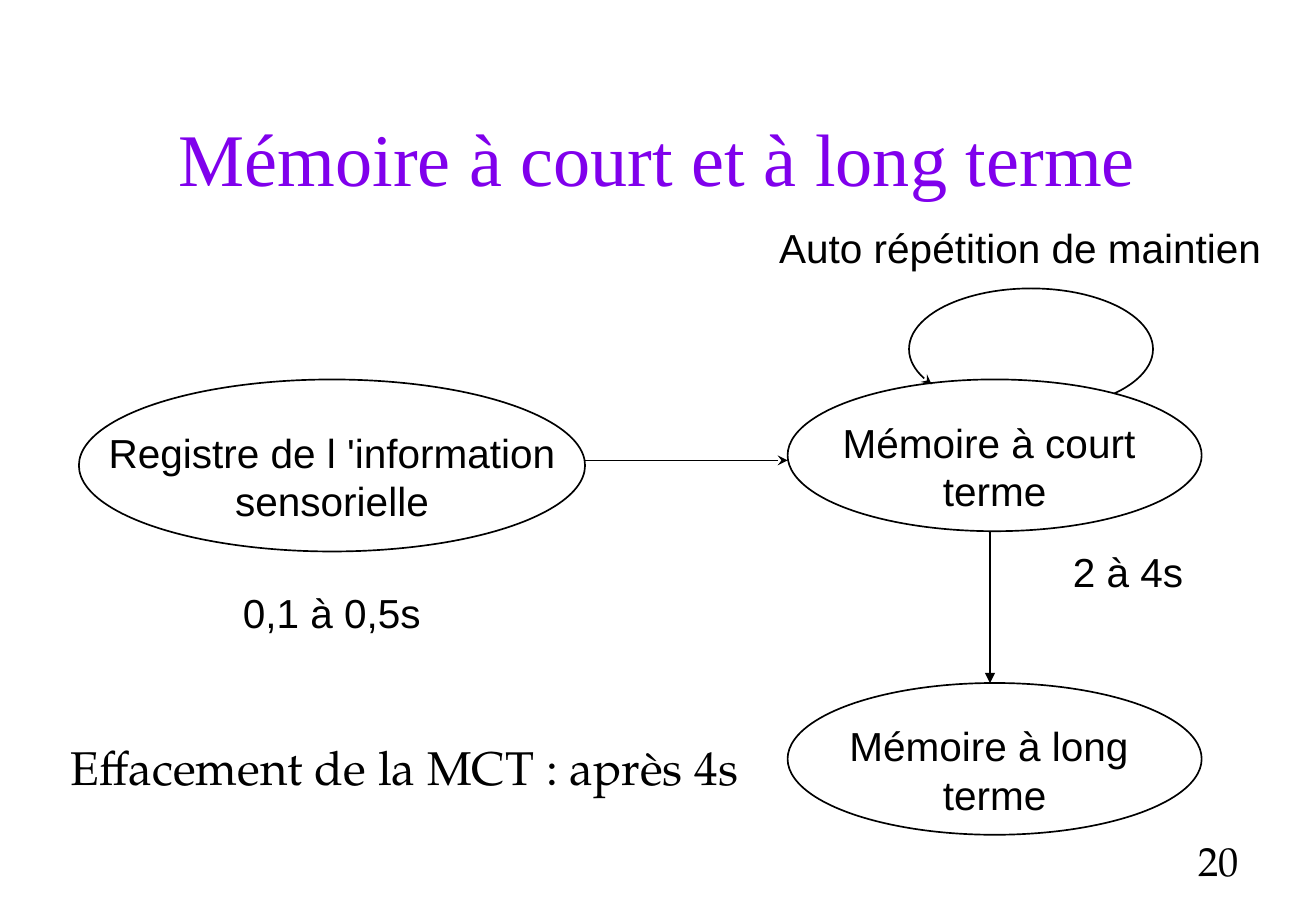
from lxml.etree import SubElement
from pptx import Presentation
from pptx.dml.color import RGBColor
from pptx.enum.shapes import MSO_CONNECTOR, MSO_SHAPE
from pptx.enum.text import MSO_ANCHOR, MSO_AUTO_SIZE, PP_ALIGN
from pptx.oxml.ns import qn
from pptx.util import Inches, Pt

BLACK = RGBColor(0x00, 0x00, 0x00)
VIOLET = RGBColor(0x80, 0x00, 0xEC)
COLUMNS = 130

presentation = Presentation()
presentation.slide_width = Inches(10.83)
presentation.slide_height = Inches(7.5)
CELL = presentation.slide_width / COLUMNS


def grid(*cells):
    """Turn numbers of square grid cells into slide lengths."""
    return [round(cell * CELL) for cell in cells]


def write(shape, text, font, size, color=BLACK, align=PP_ALIGN.LEFT, wrap=False):
    frame = shape.text_frame
    frame.text = text
    frame.word_wrap = wrap
    frame.auto_size = MSO_AUTO_SIZE.NONE
    for paragraph in frame.paragraphs:
        paragraph.alignment = align
        for name, value in {"name": font, "size": Pt(size)}.items():
            setattr(paragraph.font, name, value)
        paragraph.font.color.rgb = color


slide = presentation.slides.add_slide(presentation.slide_layouts[1])
shapes = slide.shapes

# Title and conclusion
title, conclusion = slide.placeholders
for placeholder, cells in ((title, (9.7, 8, 110.5, 15)), (conclusion, (0, 72.4, 78.7, 8))):
    box = dict(zip(("left", "top", "width", "height"), grid(*cells)))
    for name, value in box.items():
        setattr(placeholder, name, value)
write(title, "Mémoire à court et à long terme", "Times New Roman", 44,
      VIOLET, PP_ALIGN.CENTER, wrap=True)
write(conclusion, "Effacement de la MCT : après 4s", "TeX Gyre Pagella", 28, wrap=True)
properties = conclusion.text_frame.paragraphs[0]._p.get_or_add_pPr()
properties.set("marL", str(Inches(0.78)))
properties.set("indent", str(Inches(-0.3)))
SubElement(properties, qn("a:buNone"))

# Memory stores
stores = [
    ("Registre de l\u00a0'information\nsensorielle", (7.8, 37.5, 50, 17)),
    ("Mémoire à court \nterme", (77.8, 37.5, 40.9, 15)),
    ("Mémoire à long \nterme", (77.8, 67.5, 40.9, 15)),
]
for text, cells in stores:
    store = shapes.add_shape(MSO_SHAPE.OVAL, *grid(*cells))
    store.shadow.inherit = False
    store.fill.background()
    store.line.color.rgb = BLACK
    store.line.width = Pt(1)
    write(store, text, "Arial", 24, align=PP_ALIGN.CENTER)
    store.text_frame.vertical_anchor = MSO_ANCHOR.MIDDLE
    store.text_frame.margin_top = Inches(0.18)
    store.text_frame.margin_bottom = 0

# Transfers between stores and the rehearsal loop
transfers = [("stealth", (57.8, 45.5, 77.8, 45.5)), ("triangle", (97.8, 52.5, 97.8, 67.5))]
arrows = []
for head, cells in transfers:
    transfer = shapes.add_connector(MSO_CONNECTOR.STRAIGHT, *grid(*cells))
    SubElement(transfer._element.spPr, qn("a:effectLst"))
    arrows.append((transfer, "a:tailEnd", head))

rehearsal = shapes.add_shape(MSO_SHAPE.ARC, *grid(89.8, 28.5, 24.1, 12))
rehearsal.shadow.inherit = False
rehearsal.fill.background()
for index, degrees in enumerate((160.5, 28)):
    rehearsal.adjustments[index] = degrees * 0.6
arrows.append((rehearsal, "a:headEnd", "stealth"))

for arrow, end, head in arrows:
    arrow.line.color.rgb = BLACK
    arrow.line.width = Pt(1)
    SubElement(arrow.line._get_or_add_ln(), qn(end), type=head)

# Durations, loop label and page number
labels = [
    ("0,1 à 0,5s", (22.8, 57.5, 19.9, 6), "Arial", PP_ALIGN.LEFT),
    ("2 à 4s", (104.8, 53.5, 13.3, 6), "Arial", PP_ALIGN.LEFT),
    ("Auto répétition de maintien", (75.8, 21.5, 50, 6), "Arial", PP_ALIGN.LEFT),
    ("20", (96.5, 82, 27.1, 6), "TeX Gyre Pagella", PP_ALIGN.RIGHT),
]
for text, cells, font, align in labels:
    label = shapes.add_textbox(*grid(*cells))
    write(label, text, font, 24, align=align, wrap=align == PP_ALIGN.RIGHT)

presentation.save("out.pptx")
